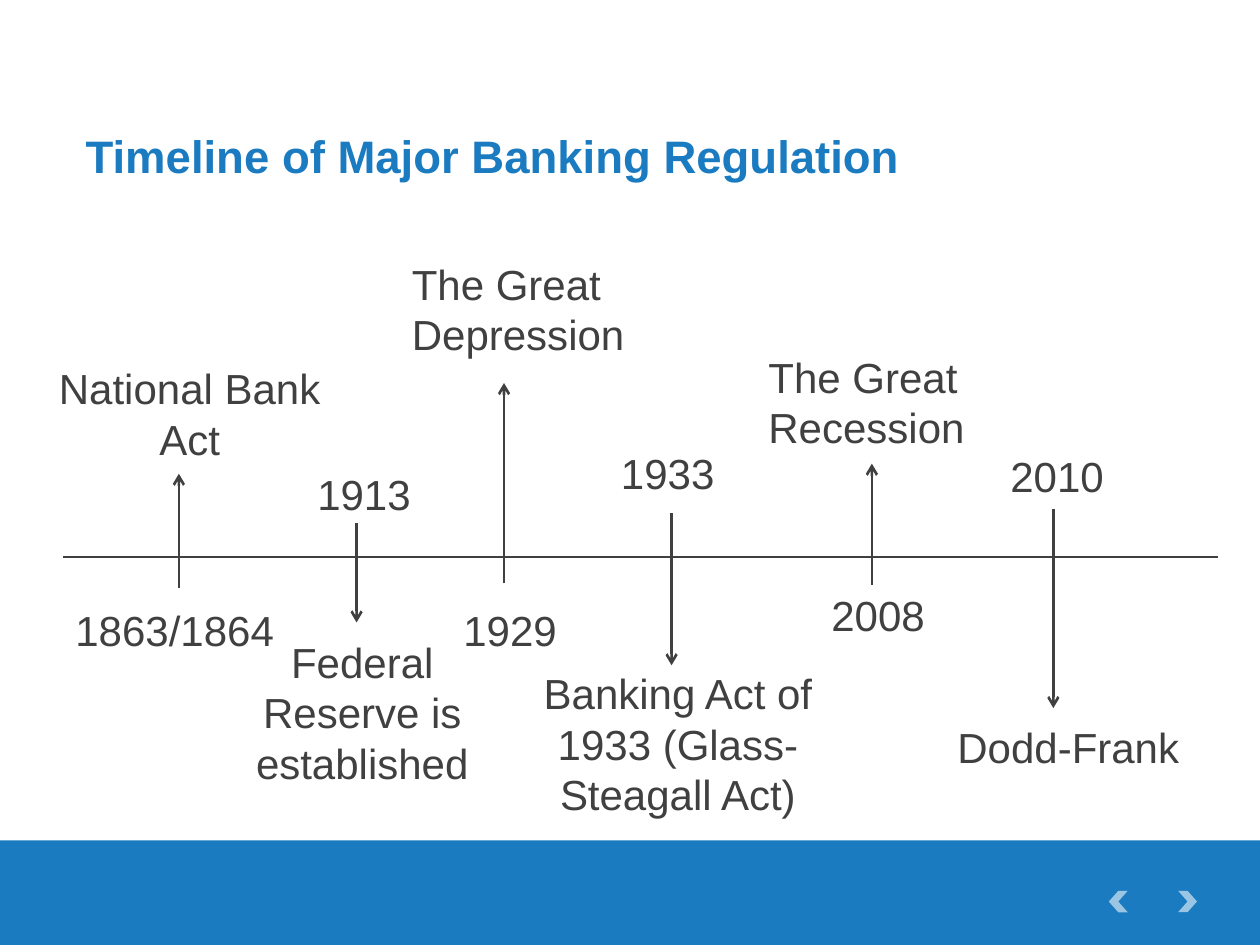
"""Build a slide with a timeline of major banking regulation."""
from lxml import etree
from pptx import Presentation
from pptx.dml.color import RGBColor
from pptx.enum.shapes import MSO_CONNECTOR, MSO_SHAPE
from pptx.enum.text import MSO_ANCHOR, MSO_AUTO_SIZE, PP_ALIGN
from pptx.oxml.ns import qn
from pptx.util import Inches, Pt

STRAIGHT = MSO_CONNECTOR.STRAIGHT
RECTANGLE, CHEVRON = MSO_SHAPE.RECTANGLE, MSO_SHAPE.CHEVRON
BOTTOM = MSO_ANCHOR.BOTTOM
FIXED, GROW = MSO_AUTO_SIZE.NONE, MSO_AUTO_SIZE.SHAPE_TO_FIT_TEXT
LEFT, CENTER = PP_ALIGN.LEFT, PP_ALIGN.CENTER

BLUE = RGBColor(0x1B, 0x7B, 0xC0)
GRAY = RGBColor(0x40, 0x40, 0x40)
WHITE = RGBColor(0xFF, 0xFF, 0xFF)

TITLE_FORMAT = {"name": "Arial", "size": Pt(26), "bold": True}
LABEL_FORMAT = {"name": "Arial", "size": Pt(24), "bold": False}

AXIS = (0.5, 4.42, 9.67, 4.42)
ARROWS = [
    (1.42, 4.67, 3.76),
    (2.83, 4.15, 4.94),
    (4, 4.63, 3.04),
    (5.33, 4.07, 5.28),
    (6.92, 4.64, 3.68),
    (8.36, 4.04, 5.62),
]
LABELS = [
    ("1863/1864", 0.5, 4.75, 1.92, 0.5, LEFT),
    ("National Bank Act", 0.17, 2.83, 2.67, 0.91, CENTER),
    ("1913", 2.42, 3.67, 1.33, 0.5, LEFT),
    ("Federal Reserve is established", 1.75, 5, 2.25, 1.31, CENTER),
    ("1929", 3.58, 4.75, 1, 0.5, LEFT),
    ("The Great Depression", 3.17, 2, 2.58, 0.91, LEFT),
    ("1933", 4.83, 3.5, 1.58, 0.5, LEFT),
    ("Banking Act of 1933 (Glass-Steagall Act)", 4.17, 5.25, 2.42, 1.31, CENTER),
    ("2008", 6.5, 4.63, 1.25, 0.5, LEFT),
    ("The Great Recession", 6, 2.74, 1.92, 0.91, LEFT),
    ("2010", 7.92, 3.53, 1.08, 0.5, LEFT),
    ("Dodd-Frank", 7.5, 5.68, 2, 0.5, LEFT),
]


def write_text(frame, text, formats, color, align):
    """Fill a text frame with one formatted paragraph."""
    frame.word_wrap = True
    para = frame.paragraphs[0]
    para.alignment = align
    span = para.add_run()
    span.text = text
    for name, value in formats.items():
        setattr(span.font, name, value)
    span.font.color.rgb = color


def set_title(page, text):
    """Place and format the title placeholder."""
    title = page.shapes.title
    title.left, title.top = Inches(0.58), Inches(0.67)
    title.width, title.height = Inches(9), Inches(0.83)
    write_text(title.text_frame, text, TITLE_FORMAT, BLUE, LEFT)
    title.text_frame.auto_size = FIXED
    title.text_frame.vertical_anchor = BOTTOM


def add_label(page, text, left, top, width, height, align):
    """Add a timeline label."""
    box = page.shapes.add_textbox(*map(Inches, (left, top, width, height)))
    write_text(box.text_frame, text, LABEL_FORMAT, GRAY, align)
    box.text_frame.auto_size = GROW


def add_line(page, start_x, start_y, end_x, end_y, arrow=False):
    """Add a plain line or one with an arrowhead at its end."""
    ends = map(Inches, (start_x, start_y, end_x, end_y))
    line = page.shapes.add_connector(STRAIGHT, *ends)
    line.line.color.rgb = GRAY
    line.line.width = Pt(1.5)
    if arrow:
        etree.SubElement(line.line._get_or_add_ln(), qn("a:tailEnd"), type="arrow")
    etree.SubElement(line._element.spPr, qn("a:effectLst"))


def add_shape(page, kind, left, top, width, height, color):
    """Add a filled shape without outline or shadow."""
    shape = page.shapes.add_shape(kind, *map(Inches, (left, top, width, height)))
    shape.shadow.inherit = False
    shape.fill.solid()
    shape.fill.fore_color.rgb = color
    shape.line.fill.background()
    return shape


def add_chevron(page, left, rotation):
    """Add a translucent navigation chevron."""
    chevron = add_shape(page, CHEVRON, left, 7.07, 0.15, 0.17, WHITE)
    chevron.rotation = rotation
    color = chevron._element.spPr.find(qn("a:solidFill"))[0]
    etree.SubElement(color, qn("a:alpha"), val="56000")


def main():
    """Build and save the deck."""
    deck = Presentation()
    deck.slide_width, deck.slide_height = Inches(10), Inches(7.5)
    page = deck.slides.add_slide(deck.slide_layouts[5])
    add_shape(page, RECTANGLE, 0, 6.67, 10, 0.85, BLUE)
    add_chevron(page, 9.35, 0)
    add_chevron(page, 8.8, 180)
    add_line(page, *AXIS)
    for x, start, end in ARROWS:
        add_line(page, x, start, x, end, arrow=True)
    for label in LABELS:
        add_label(page, *label)
    set_title(page, "Timeline of Major Banking Regulation")
    deck.save("out.pptx")


if __name__ == "__main__":
    main()
